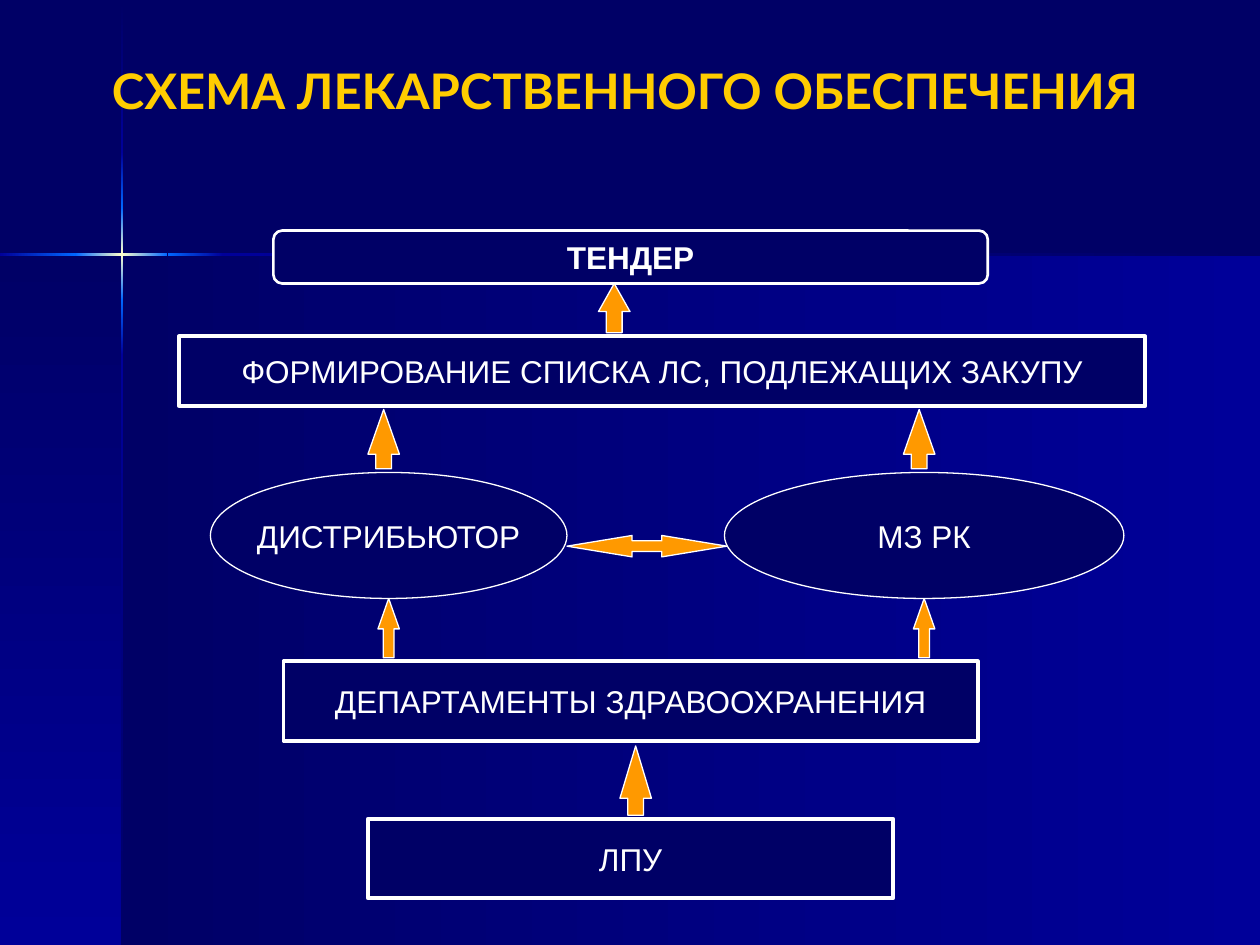
from copy import deepcopy
from typing import NamedTuple

from pptx import Presentation
from pptx.dml.color import RGBColor
from pptx.enum.shapes import MSO_SHAPE as SHAPE
from pptx.enum.text import MSO_ANCHOR as ANCHOR, PP_ALIGN as ALIGN
from pptx.oxml.ns import qn
from pptx.util import Inches, Pt

NAVY, BLUE, BRIGHT, GLOW = "000066", "000099", "0066FF", "FFFFCC"
WHITE, ORANGE, GOLD = "FFFFFF", "FF9900", "FFCC00"
DOWN, RIGHT = 270, 0  # counter-clockwise gradient angles


class Box(NamedTuple):
    left: float
    top: float
    width: float
    height: float


class Band(NamedTuple):
    box: Box
    colors: tuple
    angle: int


class Arrow(NamedTuple):
    box: Box
    head: float
    kind: SHAPE = SHAPE.UP_ARROW


class Node(NamedTuple):
    text: str
    box: Box
    kind: SHAPE = SHAPE.RECTANGLE
    line: float = 2.25
    bold: bool = False


def flare(start: float, inner: float, outer: float, end: float, limit: float) -> list:
    """Spans and colours of a ray that brightens to a glow and fades again."""
    stops = (start, inner, outer, end, limit)
    colors = ((BLUE, BRIGHT), (BRIGHT, GLOW, BRIGHT), (BRIGHT, BLUE), (BLUE, NAVY))
    return list(zip(stops, stops[1:], colors))


BANDS = [
    Band(Box(0.97, 2.02, 9.03, 5.48), (NAVY, BLUE), RIGHT),
    Band(Box(0, 2.02, 0.97, 5.48), (NAVY, BLUE), DOWN),
    Band(Box(0.96, 0.01, 0.02, 1.2), (NAVY, BLUE), DOWN),
    *(Band(Box(0.96, a, 0.02, b - a), colors, DOWN)
      for a, b, colors in flare(1.21, 1.65, 2.38, 2.82, 7.5)),
    *(Band(Box(a, 2.01, b - a, 0.02), colors, RIGHT)
      for a, b, colors in flare(0, 0.6, 1.33, 1.77, 10)),
]

ARROWS = [
    Arrow(Box(4.5, 4.25, 1.27, 0.17), 3.04, SHAPE.LEFT_RIGHT_ARROW),
    Arrow(Box(4.75, 2.25, 0.25, 0.39), 0.89),
    *(Arrow(Box(x, 3.25, 0.25, 0.47), 1.42) for x in (2.92, 7.17)),
    *(Arrow(Box(x, 4.75, 0.17, 0.47), 1.42) for x in (3, 7.25)),
    Arrow(Box(4.92, 5.92, 0.25, 0.55), 1.66),
]

NODES = [
    Node("ФОРМИРОВАНИЕ СПИСКА ЛС, ПОДЛЕЖАЩИХ ЗАКУПУ", Box(1.42, 2.67, 7.67, 0.55)),
    Node("ДЕПАРТАМЕНТЫ ЗДРАВООХРАНЕНИЯ", Box(2.25, 5.25, 5.51, 0.63)),
    Node("ЛПУ", Box(2.92, 6.5, 4.17, 0.63)),
    Node("ТЕНДЕР", Box(2.17, 1.83, 5.67, 0.42), SHAPE.ROUNDED_RECTANGLE, 1.5, True),
    Node("ДИСТРИБЬЮТОР", Box(1.67, 3.75, 2.83, 1), SHAPE.OVAL, 0.75),
    Node("МЗ РК", Box(5.75, 3.75, 3.17, 1), SHAPE.OVAL, 0.75),
]


def rgb(color: str) -> RGBColor:
    return RGBColor.from_string(color)


def add_shape(s, kind: SHAPE, box: Box):
    sp = s.shapes.add_shape(kind, *map(Inches, box))
    sp.shadow.inherit = False
    return sp


def paint(sp, fill: str, line_width: float) -> None:
    sp.fill.solid()
    sp.fill.fore_color.rgb = rgb(fill)
    sp.line.color.rgb = rgb(WHITE)
    sp.line.width = Pt(line_width)


def write(sp, text: str, color: str, frame: dict, font: dict) -> None:
    tf = sp.text_frame
    for name, value in ({"vertical_anchor": ANCHOR.MIDDLE} | frame).items():
        setattr(tf, name, value)
    p = tf.paragraphs[0]
    p.alignment = ALIGN.CENTER
    r = p.add_run()
    r.text = text
    for name, value in font.items():
        setattr(r.font, name, value)
    r.font.color.rgb = rgb(color)


def draw_band(s, band: Band) -> None:
    sp = add_shape(s, SHAPE.RECTANGLE, band.box)
    sp.line.fill.background()
    sp.fill.gradient()
    sp.fill.gradient_angle = band.angle
    stop_list = next(sp.element.iter(qn("a:gsLst")))
    while len(stop_list) < len(band.colors):
        stop_list.append(deepcopy(stop_list[0]))
    for i, (stop, color) in enumerate(zip(sp.fill.gradient_stops, band.colors)):
        stop.position = i / (len(band.colors) - 1)
        stop.color.rgb = rgb(color)


def draw_arrow(s, arrow: Arrow) -> None:
    sp = add_shape(s, arrow.kind, arrow.box)
    sp.adjustments[0], sp.adjustments[1] = 0.5, arrow.head
    paint(sp, ORANGE, 0.75)


def draw_node(s, node: Node) -> None:
    sp = add_shape(s, node.kind, node.box)
    paint(sp, NAVY, node.line)
    write(sp, node.text, WHITE, {"word_wrap": False},
          {"name": "Arial", "size": Pt(18), "bold": node.bold})


def draw_title(s, text: str) -> None:
    box = s.shapes.add_textbox(*map(Inches, Box(0.17, 0.17, 9.58, 1.14)))
    write(box, text, GOLD, {"word_wrap": True, "margin_bottom": Inches(0.1)},
          {"name": "Lato", "size": Pt(28), "bold": True})


def main() -> None:
    prs = Presentation()
    prs.slide_width, prs.slide_height = Inches(10), Inches(7.5)
    s = prs.slides.add_slide(prs.slide_layouts[6])
    s.background.fill.solid()
    s.background.fill.fore_color.rgb = rgb(NAVY)
    for band in BANDS:
        draw_band(s, band)
    draw_title(s, "СХЕМА ЛЕКАРСТВЕННОГО ОБЕСПЕЧЕНИЯ")
    for arrow in ARROWS:
        draw_arrow(s, arrow)
    for node in NODES:
        draw_node(s, node)
    prs.save("out.pptx")


if __name__ == "__main__":
    main()
